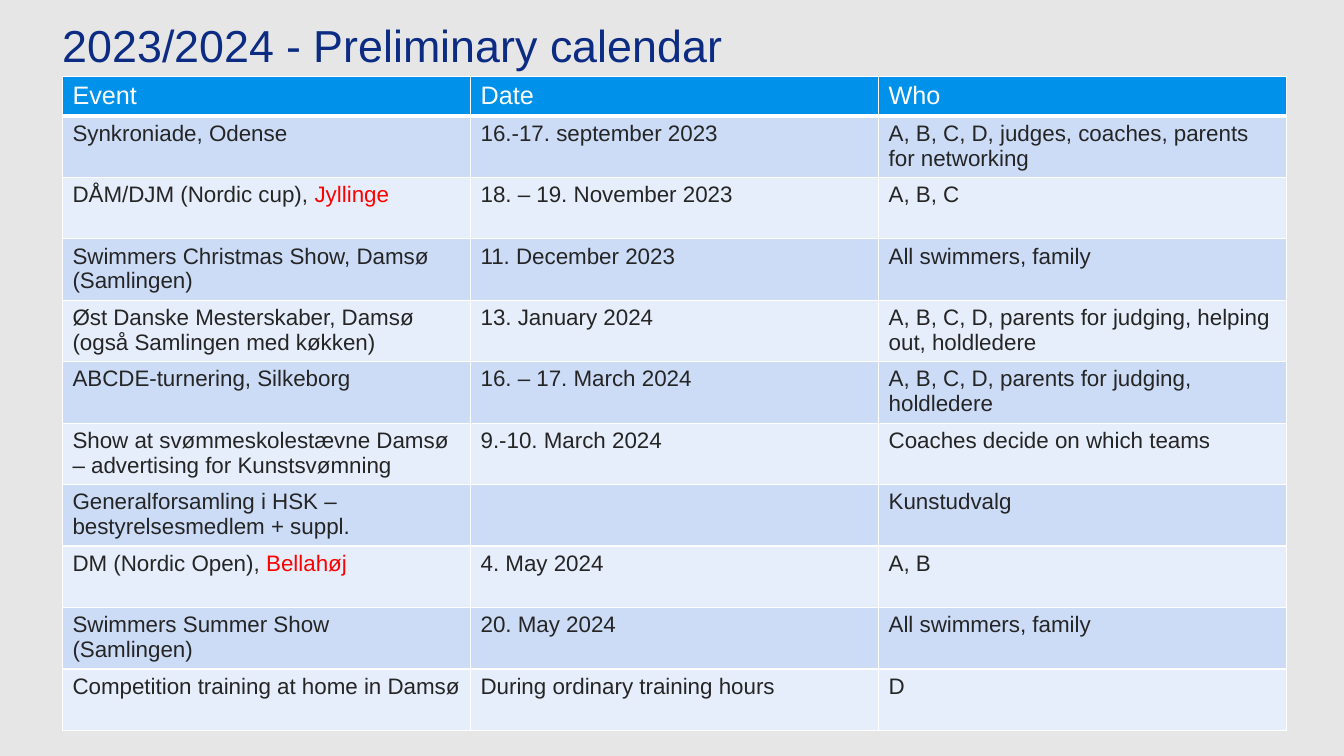
from lxml.etree import SubElement
from pptx import Presentation
from pptx.dml.color import RGBColor
from pptx.enum.text import MSO_ANCHOR as Anchor, PP_ALIGN as Align
from pptx.oxml.ns import qn
from pptx.util import Pt

FONT = "Arial"
WHITE, INK, RED = "FFFFFF", "252525", "FF0000"
HEADER_FILL, BAND_FILLS = "0091EA", ("CCDCF7", "E7EEFB")
HEADER_HEIGHT, ROW_HEIGHT = 28.2, 43.9

HEADINGS = ("Event", "Date", "Who")
# A line break starts a new paragraph; text after "|" is highlighted
EVENTS = [
    ("Synkroniade, Odense", "16.-17. september 2023",
     "A, B, C, D, judges, coaches, parents for networking"),
    ("DÅM/DJM (Nordic cup), |Jyllinge", "18. – 19. November 2023", "A, B, C"),
    ("Swimmers Christmas Show, Damsø\n(Samlingen)", "11. December 2023",
     "All swimmers, family"),
    ("Øst Danske Mesterskaber, Damsø\n(også Samlingen med køkken)", "13. January 2024",
     "A, B, C, D, parents for judging, helping out, holdledere"),
    ("ABCDE-turnering, Silkeborg", "16. – 17. March 2024",
     "A, B, C, D, parents for judging, holdledere"),
    ("Show at svømmeskolestævne Damsø – advertising for Kunstsvømning",
     "9.-10. March 2024", "Coaches decide on which teams"),
    ("Generalforsamling i HSK – bestyrelsesmedlem + suppl.", "", "Kunstudvalg"),
    ("DM (Nordic Open), |Bellahøj", "4. May 2024", "A, B"),
    ("Swimmers Summer Show\n(Samlingen)", "20. May 2024", "All swimmers, family"),
    ("Competition training at home in Damsø", "During ordinary training hours", "D"),
]


def color(value):
    return RGBColor.from_string(value)


def style_font(font, size, ink):
    font.name, font.size, font.bold = FONT, Pt(size), False
    font.color.rgb = color(ink)


def add_borders(cell, bottom):
    properties = cell._tc.get_or_add_tcPr()
    for side, width in (("L", 1), ("R", 1), ("T", 1), ("B", bottom)):
        line = SubElement(properties, qn(f"a:ln{side}"), w=str(Pt(width)))
        fill = SubElement(line, qn("a:solidFill"))
        SubElement(fill, qn("a:srgbClr"), val=WHITE)


def fill_cell(cell, text, size, ink, fill, bottom=1):
    add_borders(cell, bottom)
    cell.fill.solid()
    cell.fill.fore_color.rgb = color(fill)
    frame = cell.text_frame
    for index, line in enumerate(text.split("\n")):
        para = frame.paragraphs[0] if index == 0 else frame.add_paragraph()
        style_font(para.font, size, ink)
        plain, _, highlight = line.partition("|")
        if plain:
            para.add_run().text = plain
        if highlight:
            span = para.add_run()
            span.text = highlight
            span.font.color.rgb = color(RED)


def add_title(page, text, left, top, width, height):
    title = page.shapes.title
    title.left, title.top, title.width, title.height = map(Pt, (left, top, width, height))
    frame = title.text_frame
    frame.margin_left = frame.margin_right = frame.margin_top = frame.margin_bottom = 0
    frame.vertical_anchor = Anchor.MIDDLE
    frame.word_wrap = True
    para = frame.paragraphs[0]
    para.text = text
    para.alignment = Align.LEFT
    para.line_spacing = 0.9
    style_font(para.font, 32, "0C2C83")


def add_calendar(page, left, top, width):
    height = HEADER_HEIGHT + ROW_HEIGHT * len(EVENTS)
    table = page.shapes.add_table(len(EVENTS) + 1, len(HEADINGS),
                                  Pt(left), Pt(top), Pt(width), Pt(height)).table
    for column in table.columns:
        column.width = Pt(width / len(HEADINGS))
    # Header row
    table.rows[0].height = Pt(HEADER_HEIGHT)
    for column, heading in enumerate(HEADINGS):
        fill_cell(table.cell(0, column), heading, 18, WHITE, HEADER_FILL, bottom=3)
    # Banded event rows
    for row, event in enumerate(EVENTS, start=1):
        table.rows[row].height = Pt(ROW_HEIGHT)
        for column, text in enumerate(event):
            fill_cell(table.cell(row, column), text, 16, INK, BAND_FILLS[(row - 1) % 2])


def main():
    deck = Presentation()
    deck.slide_width, deck.slide_height = Pt(960), Pt(540)
    page = deck.slides.add_slide(deck.slide_layouts[5])
    page.background.fill.solid()
    page.background.fill.fore_color.rgb = color("E7E6E6")
    add_title(page, "2023/2024 - Preliminary calendar", 44.6, 14.4, 788.4, 39.6)
    add_calendar(page, 44.6, 54.7, 874.5)
    deck.save("out.pptx")


if __name__ == "__main__":
    main()
